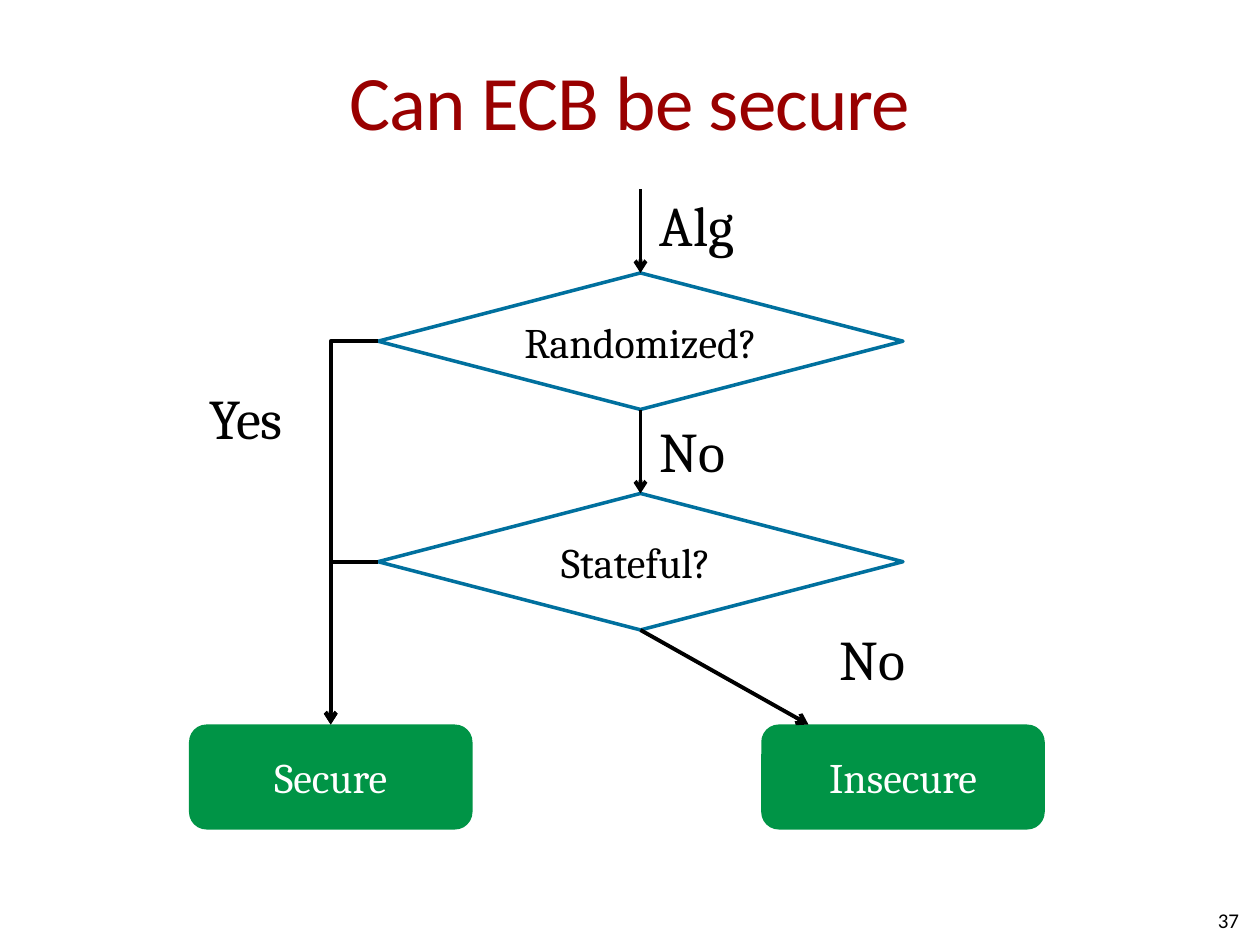
"""Build a flowchart slide that asks whether ECB can be secure."""
from pptx import Presentation
from pptx.dml.color import RGBColor
from pptx.enum.shapes import MSO_CONNECTOR as Link, MSO_SHAPE as Kind
from pptx.enum.text import MSO_ANCHOR as Anchor, MSO_AUTO_SIZE as Fit, PP_ALIGN as Align
from pptx.oxml.ns import qn
from pptx.util import Pt

RED = RGBColor(0x99, 0x00, 0x00)
BLUE = RGBColor(0x00, 0x70, 0x9E)
GREEN = RGBColor(0x00, 0x94, 0x46)
BLACK = RGBColor(0, 0, 0)
WHITE = RGBColor(255, 255, 255)

TITLE = ("Can ECB be secure", (36, 12, 648, 90))
PAGE = ("37", (540, 511, 168, 29))
TESTS = [("Randomized?", 156), ("Stateful? ", 282)]
ENDS = [("Secure", 108), ("Insecure", 435)]
LABELS = [
    ("Alg", (377, 109, 45, 39)),
    ("No", (377, 238, 39, 39)),
    ("No", (480, 357, 39, 39)),
    ("Yes", (120, 219, 48, 39)),
]
TEST_X, TEST_W, TEST_H = 216, 300, 78
END_Y, END_W, END_H = 414, 162, 60
MID = TEST_X + TEST_W / 2
ENTRY = (MID, 108)
EXIT = (462, END_Y)

HEAD = dict(name="Calibri", size=Pt(44), color=RED)
NUMBER = dict(name="Calibri", size=Pt(12), color=BLACK)
LABEL = dict(name="Cambria", size=Pt(32), color=BLACK)
TEST = dict(name="Cambria", size=Pt(24), color=BLACK)
END = dict(TEST, color=WHITE)


def write(shape, text, font, align=Align.CENTER, anchor=Anchor.MIDDLE, wrap=True):
    frame = shape.text_frame
    form = dict(margin_left=0, margin_right=0, margin_top=0, margin_bottom=0,
                vertical_anchor=anchor, word_wrap=wrap)
    for key, val in form.items():
        setattr(frame, key, val)
    para = frame.paragraphs[0]
    para.alignment = align
    run = para.add_run()
    run.text = text
    for key, val in font.items():
        if key == "color":
            run.font.color.rgb = val
        else:
            setattr(run.font, key, val)
    return run


def add_text(slide, text, box, font, **form):
    shape = slide.shapes.add_textbox(*map(Pt, box))
    return shape, write(shape, text, font, **form)


def add_node(slide, kind, text, box, fill, font, edge=None):
    node = slide.shapes.add_shape(kind, *map(Pt, box))
    node.shadow.inherit = False
    node.fill.solid()
    node.fill.fore_color.rgb = fill
    if edge is None:
        node.line.fill.background()
    else:
        node.line.color.rgb = edge
        node.line.width = Pt(2)
    write(node, text, font)
    return node


def add_arrow(slide, start, stop, bent=False):
    kind = Link.ELBOW if bent else Link.STRAIGHT
    free = [end if isinstance(end[0], (int, float)) else (0, 0) for end in (start, stop)]
    arrow = slide.shapes.add_connector(kind, *(Pt(v) for end in free for v in end))
    for end, join in ((start, arrow.begin_connect), (stop, arrow.end_connect)):
        if not isinstance(end[0], (int, float)):
            join(*end)
    arrow.line.color.rgb = BLACK
    arrow.line.width = Pt(2.25)
    props = arrow._element.spPr
    if bent:
        props.find(qn("a:prstGeom")).set("prst", "bentConnector2")
    line = props.find(qn("a:ln"))
    tip = line.makeelement(qn("a:tailEnd"), {"type": "arrow"})
    line.append(tip)
    props.append(props.makeelement(qn("a:effectLst"), {}))


def main():
    deck = Presentation()
    deck.slide_width, deck.slide_height = Pt(720), Pt(540)
    slide = deck.slides.add_slide(deck.slide_layouts[6])

    _, run = add_text(slide, *TITLE, HEAD)
    run.font._element.set("spc", "-50")
    add_text(slide, *PAGE, NUMBER, align=Align.RIGHT)

    first, second = [
        add_node(slide, Kind.DIAMOND, text, (TEST_X, top, TEST_W, TEST_H), WHITE, TEST, BLUE)
        for text, top in TESTS]
    safe, _ = [
        add_node(slide, Kind.ROUNDED_RECTANGLE, text, (left, END_Y, END_W, END_H), GREEN, END)
        for text, left in ENDS]

    add_arrow(slide, ENTRY, (first, 0))
    add_arrow(slide, (first, 2), (second, 0))
    add_arrow(slide, (second, 2), EXIT)
    for node in (first, second):
        add_arrow(slide, (node, 1), (safe, 0), bent=True)

    for text, box in LABELS:
        shape, _ = add_text(slide, text, box, LABEL, align=Align.LEFT,
                            anchor=Anchor.TOP, wrap=False)
        shape.text_frame.auto_size = Fit.SHAPE_TO_FIT_TEXT

    deck.save("out.pptx")


if __name__ == "__main__":
    main()
